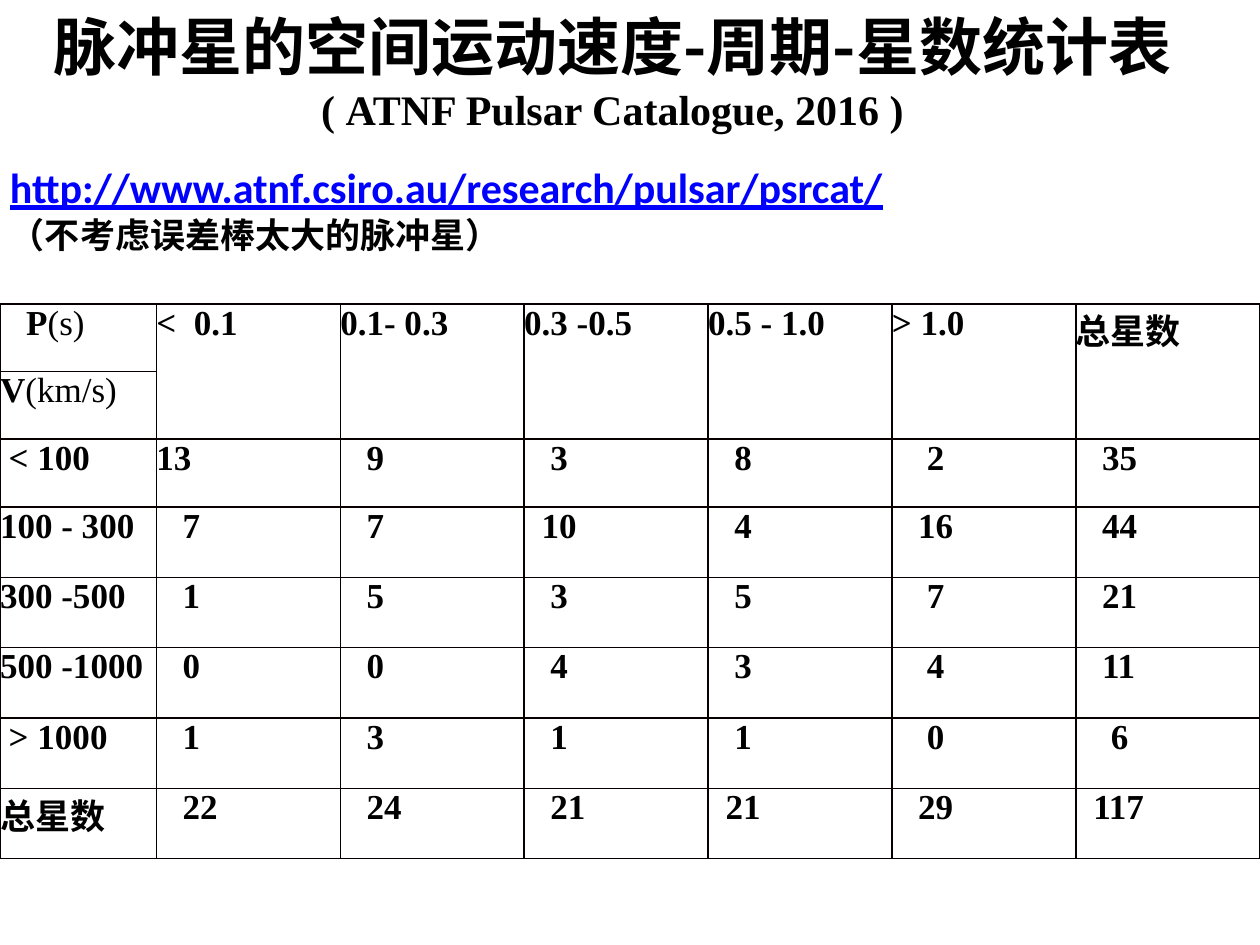
from lxml.etree import SubElement
from pptx import Presentation
from pptx.dml.color import RGBColor
from pptx.enum.text import MSO_ANCHOR, PP_ALIGN
from pptx.oxml.ns import qn
from pptx.util import Pt

COLORS = {"ink": "000000", "rule": "080000", "address": "0000FF"}
SERIF = "Times New Roman"
SANS = "Calibri"
CHINESE = "Noto Sans CJK SC"

PERIODS = ["<  0.1", "0.1- 0.3", "0.3 -0.5", "0.5 - 1.0", "> 1.0", "总星数"]
VELOCITY_COUNTS = [
    ("< 100", 13, 9, 3, 8, 2, 35),
    ("100 - 300", 7, 7, 10, 4, 16, 44),
    ("300 -500", 1, 5, 3, 5, 7, 21),
    ("500 -1000", 0, 0, 4, 3, 4, 11),
    ("> 1000", 1, 3, 1, 1, 0, 6),
    ("总星数", 22, 24, 21, 21, 29, 117),
]
HEADER_ROWS = 2
SPECIAL_INDENTS = {(2, 1): 0, (3, 3): 10, (7, 4): 10, (7, 6): 10}


def write(paragraph, text, size=20, font=SERIF, color="ink", bold=True, underline=False):
    run = paragraph.add_run()
    run.text = text
    style = run.font
    style.size, style.name = Pt(size), font
    style.bold, style.underline = bold, underline
    style.color.rgb = RGBColor.from_string(COLORS[color])
    SubElement(run._r.get_or_add_rPr(), qn("a:ea"), typeface=CHINESE)


def count_indent(row, column, text):
    if column == 0:
        return 5 if text[0] in "<>" else 0
    default = 20 if column >= 5 and len(text) == 1 else 15
    return SPECIAL_INDENTS.get((row, column), default)


class SlideBuilder:
    def __init__(self, deck):
        self.slide = deck.slides.add_slide(deck.slide_layouts[5])

    def place(self, shape, left, top, width, height):
        shape.left, shape.top = Pt(left), Pt(top)
        shape.width, shape.height = Pt(width), Pt(height)

    def title(self, heading, source, *box):
        title = self.slide.shapes.title
        self.place(title, *box)
        frame = title.text_frame
        frame.vertical_anchor = MSO_ANCHOR.TOP
        frame.margin_top = frame.margin_bottom = 0
        paragraph = frame.paragraphs[0]
        paragraph.alignment = PP_ALIGN.CENTER
        write(paragraph, heading, size=36, font=CHINESE)
        paragraph.add_line_break()
        write(paragraph, source, size=24)

    def notes(self, address, remark, *box):
        frame = self.slide.shapes.add_textbox(*map(Pt, box)).text_frame
        frame.word_wrap = True
        write(frame.paragraphs[0], address, size=24, font=SANS, color="address", underline=True)
        remark_line = frame.add_paragraph()
        remark_line.space_before = Pt(1)
        write(remark_line, remark, font=CHINESE)

    def table(self, left, top, widths, heights):
        frame = self.slide.shapes.add_table(
            len(heights), len(widths), Pt(left), Pt(top), Pt(sum(widths)), Pt(sum(heights)))
        table = frame.table
        table.first_row = table.horz_banding = False
        for column, width in zip(table.columns, widths):
            column.width = Pt(width)
        for row, height in zip(table.rows, heights):
            row.height = Pt(height)
        for row in range(len(heights)):
            for column in range(len(widths)):
                self.style_cell(table.cell(row, column), column)
        return table

    def style_cell(self, cell, column):
        cell.margin_left = cell.margin_right = cell.margin_top = cell.margin_bottom = 0
        properties = cell._tc.get_or_add_tcPr()
        for side in "LRTB":
            thin = side == "R" and column > 0
            line = SubElement(properties, qn("a:ln" + side), w=str(Pt(0.75 if thin else 1)))
            fill = SubElement(line, qn("a:solidFill"))
            SubElement(fill, qn("a:srgbClr"), val=COLORS["ink" if thin else "rule"])
        cell.fill.background()

    def cell_text(self, cell, text, indent=0, unit=""):
        cell.margin_left = Pt(indent)
        paragraph = cell.text_frame.paragraphs[0]
        write(paragraph, text)
        if unit:
            write(paragraph, unit, bold=False)


def main():
    deck = Presentation()
    deck.slide_width, deck.slide_height = Pt(720), Pt(540)
    builder = SlideBuilder(deck)
    builder.title("脉冲星的空间运动速度-周期-星数统计表",
                  "( ATNF Pulsar Catalogue, 2016 )", 0, 4.5, 700, 90)
    builder.notes("http://www.atnf.csiro.au/research/pulsar/psrcat/",
                  "（不考虑误差棒太大的脉冲星）", -1.4, 88.6, 722, 394)

    counts = builder.table(0, 173.6, [89.4] + [105.1] * 6, [38.7] * 3 + [40.2] * 5)
    builder.cell_text(counts.cell(0, 0), "P", indent=15, unit="(s)")
    builder.cell_text(counts.cell(1, 0), "V", unit="(km/s)")
    for column, period in enumerate(PERIODS, 1):
        counts.cell(0, column).merge(counts.cell(1, column))
        builder.cell_text(counts.cell(0, column), period)
    for row, values in enumerate(VELOCITY_COUNTS, HEADER_ROWS):
        for column, value in enumerate(values):
            text = str(value)
            builder.cell_text(counts.cell(row, column), text, count_indent(row, column, text))
    deck.save("out.pptx")


if __name__ == "__main__":
    main()
